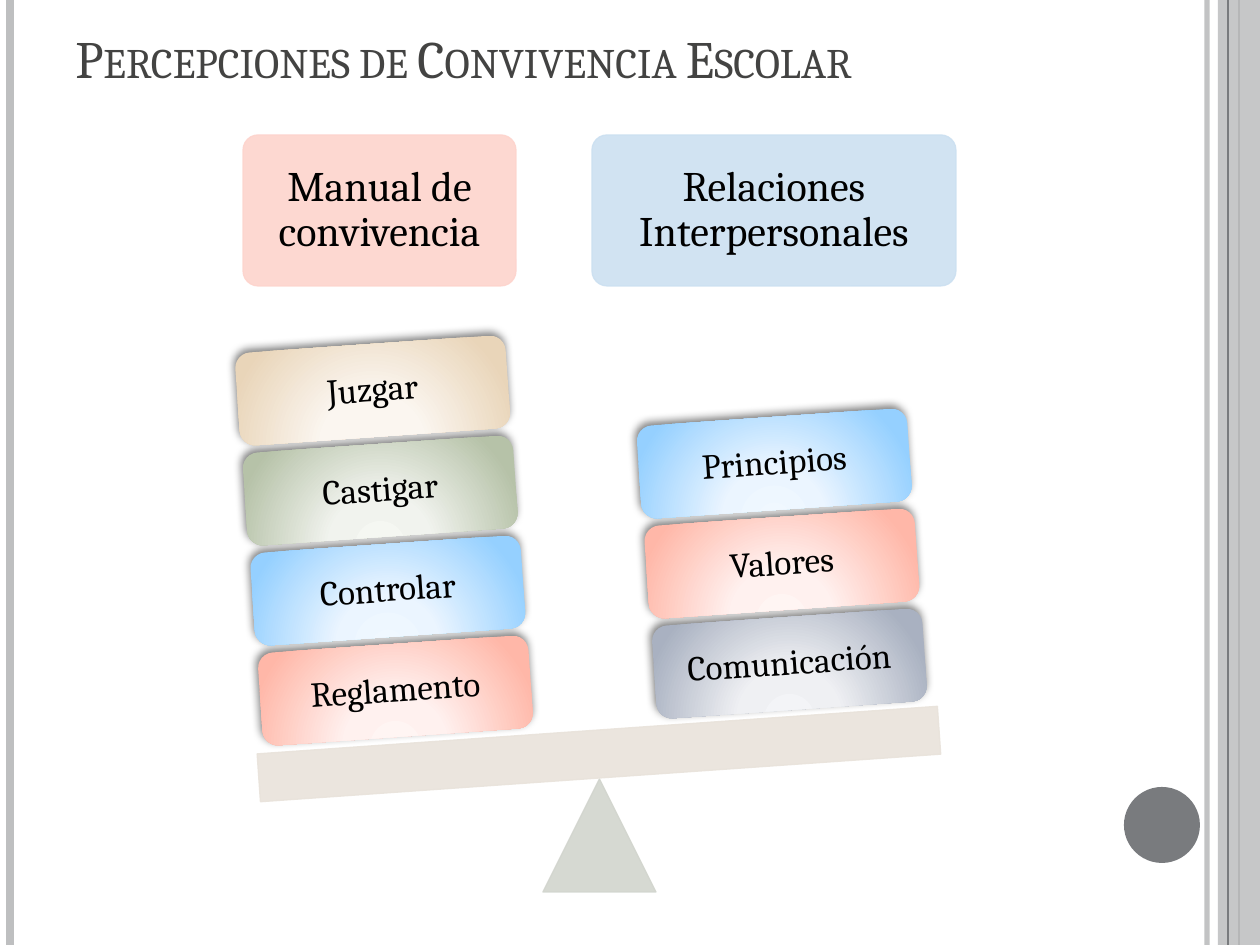
import pptx
import pptx.dml.color
import pptx.enum.shapes
import pptx.enum.text
import pptx.oxml
import pptx.oxml.ns
import pptx.util

PX = 914400 / 126
TILT = 356
FONT = "Cambria"
SHAPE = pptx.enum.shapes.MSO_SHAPE
COLORS = {
    "ink": "000000", "title": "434342", "rail": "BEBFC0", "accent": "797B7E",
    "manual": "FDD4CD", "relations": "CCE0F1", "pivot": "D2D5CE", "beam": "E9E3DB",
}
GRADIENTS = {
    "coral": ("FFF5F3", "FFF1EF", "FFB7A8"),
    "sky": ("F0F8FF", "EBF5FF", "95D0FF"),
    "sage": ("F5F7F2", "F1F3EE", "B6C2A8"),
    "sand": ("FDF9F3", "FBF6F0", "E9D5B9"),
    "slate": ("F3F4F7", "EFF0F3", "A9B1C1"),
}
STACKS = [
    (260, 644, [("Reglamento", "coral"), ("Controlar", "sky"),
                ("Castigar", "sage"), ("Juzgar", "sand")]),
    (654, 617, [("Comunicación", "slate"), ("Valores", "coral"), ("Principios", "sky")]),
]
RAILS = [(1207, "rail", 3, 93), (10, "rail", 4.5, 100), (1239, "accent", 1.5, 100)]


def px(length):
    """Turn pixels into EMU."""
    return pptx.util.Emu(round(length * PX))


def rgb(name):
    """Look up a named colour."""
    return pptx.dml.color.RGBColor.from_string(COLORS[name])


def drawing_xml(tag, body):
    """Parse one DrawingML element."""
    namespace = pptx.oxml.ns.nsdecls("a")
    return pptx.oxml.parse_xml(f"<a:{tag} {namespace}>{body}</a:{tag}>")


def set_opacity(element, percent):
    """Make every solid colour of an element translucent."""
    if percent < 100:
        for color in element.spPr.iter(pptx.oxml.ns.qn("a:srgbClr")):
            color.append(pptx.oxml.parse_xml(
                f'<a:alpha {pptx.oxml.ns.nsdecls("a")} val="{percent * 1000}"/>'))


def add_rail(slide, x, color, width, opacity):
    """Draw a vertical line down the whole slide."""
    rail = slide.shapes.add_connector(
        pptx.enum.shapes.MSO_CONNECTOR.STRAIGHT, px(x), 0, px(x), px(945))
    rail.line.color.rgb = rgb(color)
    rail.line.width = pptx.util.Pt(width)
    set_opacity(rail._element, opacity)
    rail._element.spPr.append(drawing_xml("effectLst", ""))


def add_flat(slide, kind, box, color, opacity=90, outlined=True):
    """Add a shape with one plain colour."""
    flat = slide.shapes.add_shape(kind, *map(px, box))
    flat.shadow.inherit = False
    flat.fill.solid()
    flat.fill.fore_color.rgb = rgb(color)
    if outlined:
        flat.line.color.rgb = rgb(color)
        flat.line.width = pptx.util.Pt(0.75)
    else:
        flat.line.fill.background()
    set_opacity(flat._element, opacity)
    return flat


def write_text(holder, words, size, color="ink", margin=None):
    """Write one paragraph, centred when a margin is given."""
    frame = holder.text_frame
    paragraph = frame.paragraphs[0]
    frame_format = {"word_wrap": True, "vertical_anchor": pptx.enum.text.MSO_ANCHOR.BOTTOM}
    if margin is not None:
        frame_format["vertical_anchor"] = pptx.enum.text.MSO_ANCHOR.MIDDLE
        for side in ("left", "right", "top", "bottom"):
            frame_format[f"margin_{side}"] = px(margin)
        paragraph.alignment = pptx.enum.text.PP_ALIGN.CENTER
        paragraph.line_spacing = 0.9
    for name, value in frame_format.items():
        setattr(frame, name, value)
    run = paragraph.add_run()
    run.text = words
    for name, value in {"name": FONT, "size": pptx.util.Pt(size)}.items():
        setattr(run.font, name, value)
    run.font.color.rgb = rgb(color)
    return run


def add_title(slide, words):
    """Add the heading in small capitals."""
    heading = slide.shapes.add_textbox(px(63), px(6), px(1029), px(89))
    run = write_text(heading, words, 30, "title")
    run._r.get_or_add_rPr().set("cap", "small")


def add_panel(slide, box, color, words):
    """Add a heading panel above a stack."""
    panel = add_flat(slide, SHAPE.ROUNDED_RECTANGLE, box, color)
    panel.adjustments[0] = 0.1
    write_text(panel, words, 24, margin=13)


def add_block(slide, x, y, words, gradient):
    """Add a tilted block with a radial gradient and a shadow."""
    block = slide.shapes.add_shape(SHAPE.ROUNDED_RECTANGLE, px(x), px(y), px(271), px(93))
    block.rotation = TILT
    block.line.fill.background()
    stops = "".join(
        f'<a:gs pos="{position * 1000}"><a:srgbClr val="{color}"/></a:gs>'
        for position, color in zip((0, 34, 100), GRADIENTS[gradient]))
    properties = block._element.spPr
    properties.find(pptx.oxml.ns.qn("a:prstGeom")).addnext(drawing_xml(
        "gradFill", f'<a:gsLst>{stops}</a:gsLst><a:path path="circle">'
        '<a:fillToRect l="50000" t="155000" r="50000" b="-55000"/></a:path>'))
    properties.append(drawing_xml(
        "effectLst", '<a:outerShdw blurRad="63500" dist="25400" dir="14700000" '
        'rotWithShape="0"><a:srgbClr val="000000"><a:alpha val="50000"/>'
        "</a:srgbClr></a:outerShdw>"))
    write_text(block, words, 20, margin=10)


def add_stack(slide, x, y, blocks):
    """Pile blocks upward along the tilt."""
    for level, (words, gradient) in enumerate(blocks):
        add_block(slide, x - 7.6 * level, y - 100 * level, words, gradient)


def main():
    """Build the slide."""
    deck = pptx.Presentation()
    deck.slide_width, deck.slide_height = px(1260), px(945)
    slide = deck.slides.add_slide(deck.slide_layouts[6])
    for rail in RAILS:
        add_rail(slide, *rail)
    add_flat(slide, SHAPE.RECTANGLE, (1218, 0, 42, 945), "rail", 87, False)
    add_rail(slide, 1228, "accent", 0.75, 100)
    add_flat(slide, SHAPE.OVAL, (1124, 787, 76, 76), "accent", 100, False)
    add_title(slide, "Percepciones de Convivencia Escolar")
    add_panel(slide, (243, 135, 273, 151), "manual", "Manual de convivencia")
    add_panel(slide, (592, 135, 364, 151), "relations", "Relaciones Interpersonales")
    add_flat(slide, SHAPE.ISOSCELES_TRIANGLE, (543, 779, 113, 113), "pivot")
    beam = add_flat(slide, SHAPE.RECTANGLE, (258, 730, 682, 48), "beam")
    beam.rotation = TILT
    for stack in STACKS:
        add_stack(slide, *stack)
    deck.save("out.pptx")


if __name__ == "__main__":
    main()
